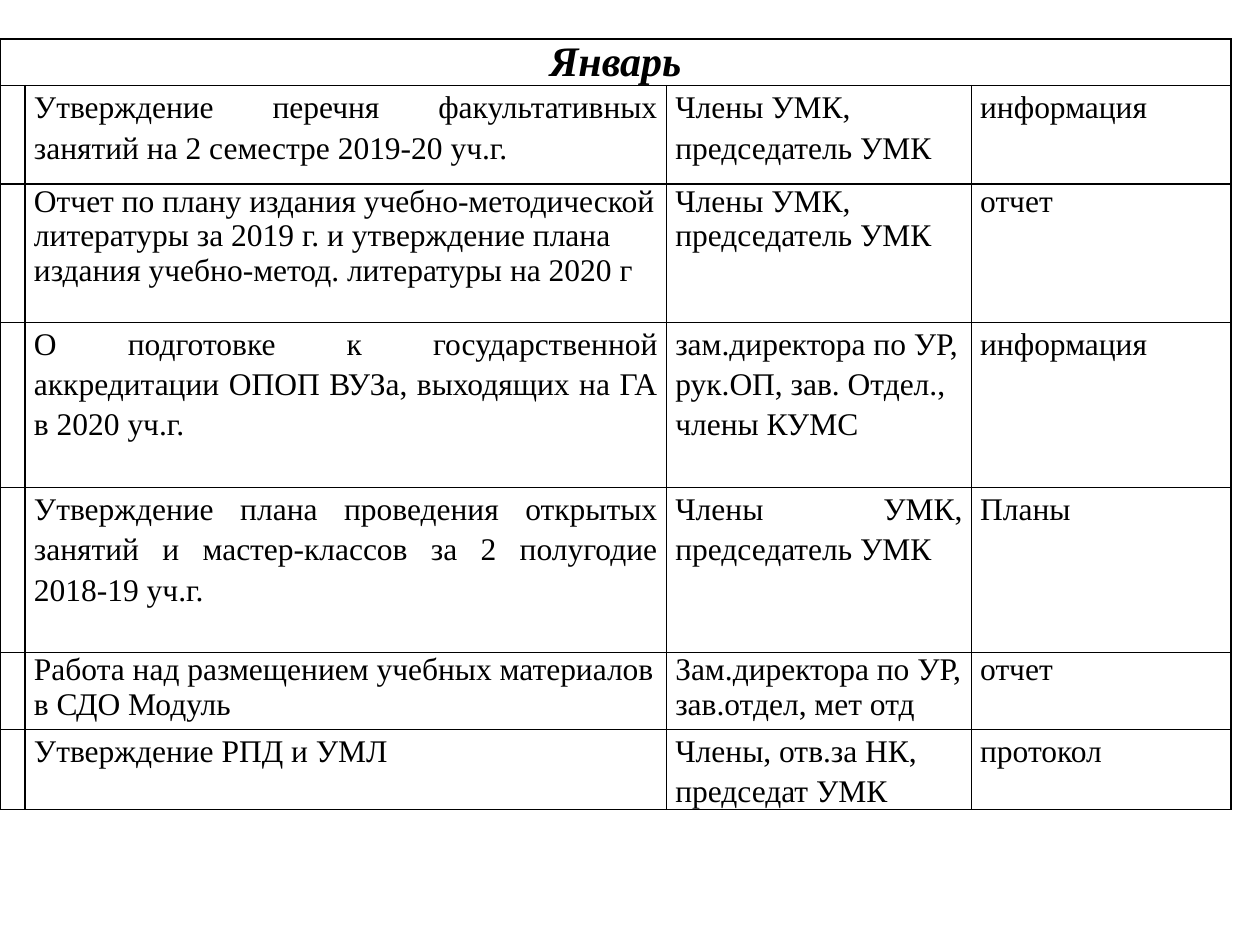
import lxml.etree
import pptx
import pptx.dml.color
import pptx.enum.text
import pptx.oxml.ns
import pptx.util

COLORS = {"ink": "000000"}
FONT = "Times New Roman"
ALIGN = pptx.enum.text.PP_ALIGN
WIDTH, HEIGHT = 10, 7.5

MONTH = "Январь"
COLUMNS = [0.2, 5.09, 2.42, 2.06]
HEADING_ROW = 0.37
LEFT, JUSTIFIED = ALIGN.LEFT, ALIGN.JUSTIFY

# Row height, line spacing, then (text, alignment) for task, people and result
PLAN = [
    (0.78, 1.15,
     ("Утверждение перечня факультативных занятий на 2 семестре 2019-20 уч.г.", JUSTIFIED),
     ("Члены УМК, председатель УМК", LEFT),
     ("информация", JUSTIFIED)),
    (1.1, 1,
     ("Отчет по плану издания учебно-методической литературы за 2019 г. и утверждение "
      "плана издания учебно-метод. литературы на 2020 г", LEFT),
     ("Члены УМК, председатель УМК", LEFT),
     ("отчет", LEFT)),
    (1.31, 1.15,
     ("О подготовке к государственной аккредитации ОПОП ВУЗа, выходящих на "
      "ГА в 2020 уч.г.", JUSTIFIED),
     ("зам.директора по УР, рук.ОП, зав. Отдел., члены КУМС", LEFT),
     ("информация", JUSTIFIED)),
    (1.31, 1.15,
     ("Утверждение плана проведения открытых занятий и мастер-классов за "
      "2 полугодие 2018-19 уч.г.", JUSTIFIED),
     ("Члены УМК, председатель УМК", JUSTIFIED),
     ("Планы", JUSTIFIED)),
    (0.61, 1,
     ("Работа над размещением учебных материалов в СДО Модуль", LEFT),
     ("Зам.директора по УР, зав.отдел, мет отд", LEFT),
     ("отчет", LEFT)),
    (0.63, 1.15,
     ("Утверждение РПД и УМЛ", JUSTIFIED),
     ("Члены, отв.за НК, председат УМК", LEFT),
     ("протокол", JUSTIFIED)),
]


def set_values(target, values):
    for name, value in values.items():
        setattr(target, name, value)


class PlanSlide:
    """Holds the table style and the slide being filled."""

    def __init__(self, deck):
        self.page = deck.slides.add_slide(deck.slide_layouts[6])
        self.font = {"name": FONT, "size": pptx.util.Pt(18), "bold": False, "italic": False}
        self.heading = {"size": pptx.util.Pt(24), "bold": True, "italic": True}
        self.line_width = pptx.util.Pt(1)

    def table(self, left, top, columns, rows):
        """Add a ruled, unfilled table; left and top are shares of the slide."""
        frame = self.page.shapes.add_table(
            len(rows), len(columns),
            pptx.util.Inches(left * WIDTH), pptx.util.Inches(top * HEIGHT),
            pptx.util.Inches(sum(columns)), pptx.util.Inches(sum(rows)))
        table = frame.table
        set_values(table, {"first_row": False, "horz_banding": False})
        for column, width in zip(table.columns, columns):
            column.width = pptx.util.Inches(width)
        for row, height in zip(table.rows, rows):
            row.height = pptx.util.Inches(height)
            for cell in row.cells:
                self.rule(cell)
        return table

    def rule(self, cell):
        side_margin = pptx.util.Inches(0.07)
        set_values(cell, {"margin_left": side_margin, "margin_right": side_margin,
                          "margin_top": 0, "margin_bottom": 0})
        qn = pptx.oxml.ns.qn
        properties = cell._tc.get_or_add_tcPr()
        for side in ("a:lnL", "a:lnR", "a:lnT", "a:lnB"):
            line = lxml.etree.SubElement(properties, qn(side), w=str(self.line_width))
            fill = lxml.etree.SubElement(line, qn("a:solidFill"))
            lxml.etree.SubElement(fill, qn("a:srgbClr"), val=COLORS["ink"])
        cell.fill.background()

    def text(self, cell, words, alignment, spacing=1, **changes):
        para = cell.text_frame.paragraphs[0]
        set_values(para, {"alignment": alignment, "line_spacing": float(spacing)})
        span = para.add_run()
        span.text = words
        set_values(span.font, {**self.font, **changes})
        span.font.color.rgb = pptx.dml.color.RGBColor.from_string(COLORS["ink"])


def main():
    deck = pptx.Presentation()
    set_values(deck, {"slide_width": pptx.util.Inches(WIDTH),
                      "slide_height": pptx.util.Inches(HEIGHT)})
    slide = PlanSlide(deck)
    heights = [HEADING_ROW] + [height for height, *_ in PLAN]
    table = slide.table(0, 0.31 / HEIGHT, COLUMNS, heights)

    table.cell(0, 0).merge(table.cell(0, len(COLUMNS) - 1))
    slide.text(table.cell(0, 0), MONTH, ALIGN.CENTER, **slide.heading)
    for row, (_, spacing, *entries) in enumerate(PLAN, start=1):
        for column, (words, alignment) in enumerate(entries, start=1):
            slide.text(table.cell(row, column), words, alignment, spacing)
    deck.save("out.pptx")


if __name__ == "__main__":
    main()
